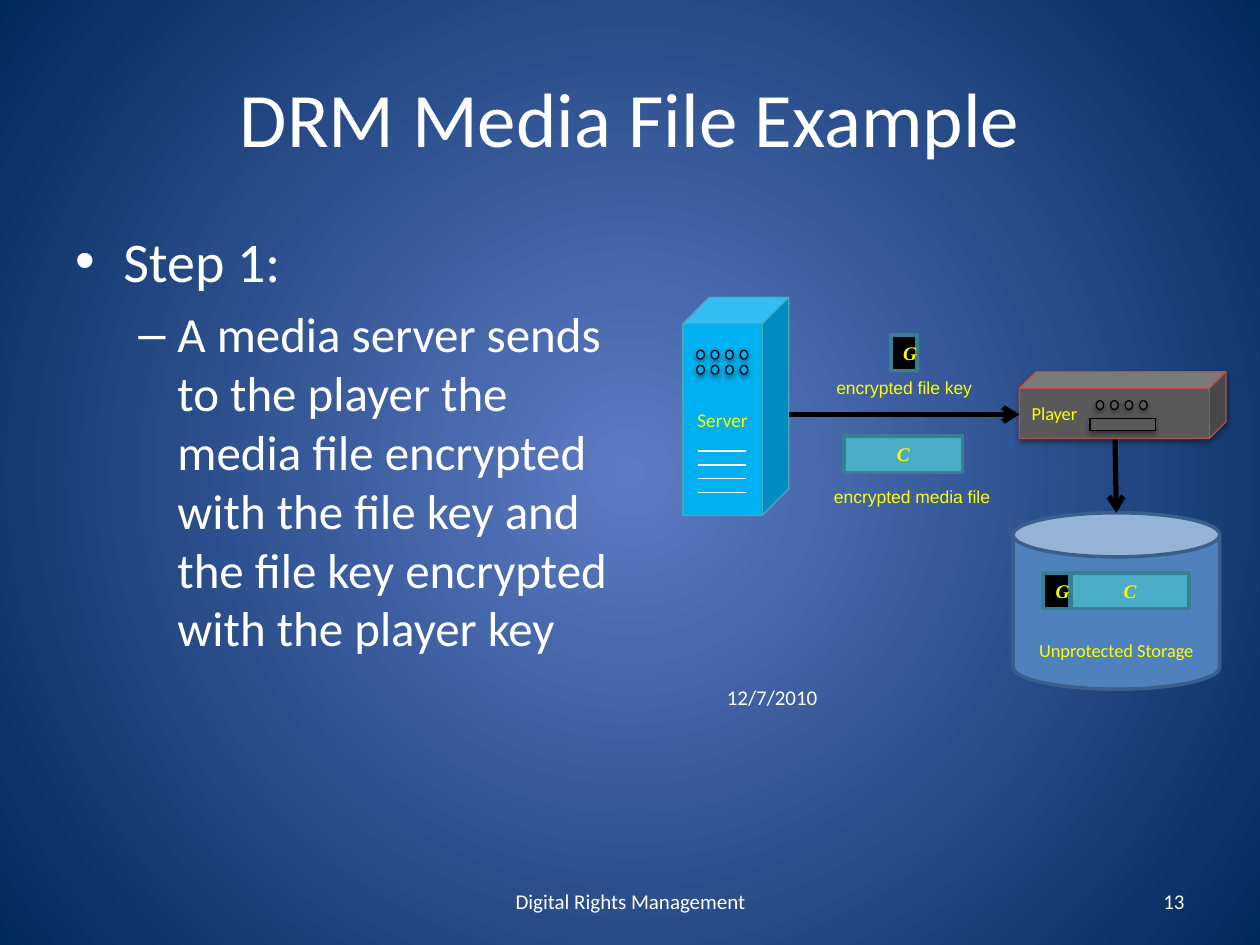
from dataclasses import dataclass

from lxml import etree
from pptx import Presentation
from pptx import util as u
from pptx.dml.color import RGBColor
from pptx.enum import shapes, text
from pptx.oxml import parse_xml
from pptx.oxml.ns import nsdecls, qn

KIND = shapes.MSO_SHAPE
ALIGN = text.PP_ALIGN
ANCHOR = text.MSO_ANCHOR


@dataclass(frozen=True)
class Theme:
    font: str = "Calibri"
    label_font: str = "Arial"
    symbol_font: str = "Times New Roman"
    white: str = "FFFFFF"
    black: str = "000000"
    yellow: str = "FFFF00"
    glow: str = "5E7CC5"
    navy: str = "00295C"
    player: str = "595959"
    player_edge: str = "BF4C48"
    server: str = "00B0F0"
    server_edge: str = "46AAC5"
    storage: str = "4F81BD"
    storage_edge: str = "3A5F8C"
    media: str = "4BACC6"
    media_edge: str = "377F92"
    title: float = 44
    body: float = 32
    sub: float = 28
    footer: float = 12
    symbol: float = 11
    device: float = 10.5
    label: float = 10
    hairline: float = 0.75
    arrow: float = 3


class Board:
    COLS, ROWS = 100, 75

    def __init__(self, prs, theme):
        self.prs, self.t = prs, theme
        self.s = prs.slides.add_slide(prs.slide_layouts[6])
        self.target = self.s.shapes

    def x(self, cols):
        return round(self.prs.slide_width * cols / self.COLS)

    def y(self, rows):
        return round(self.prs.slide_height * rows / self.ROWS)

    def box(self, left, top, width, height):
        return self.x(left), self.y(top), self.x(width), self.y(height)

    def group(self):
        self.target = self.s.shapes.add_group_shape().shapes

    def ungroup(self):
        self.target = self.s.shapes

    def background(self, inner, outer):
        fill = self.s.background.fill
        fill.gradient()
        for stop, color in zip(fill.gradient_stops, (inner, outer)):
            stop.color.rgb = RGBColor.from_string(color)
        grad = self.s.background._cSld.find(".//" + qn("a:gradFill"))
        grad.replace(grad.find(qn("a:lin")), parse_xml(
            f'<a:path {nsdecls("a")} path="circle">'
            '<a:fillToRect l="50000" t="50000" r="50000" b="50000"/></a:path>'))

    def run(self, p, words, size, color=None, font=None, strong=False):
        r = p.add_run()
        r.text = words
        r.font.size = u.Pt(size)
        r.font.name = font or self.t.font
        r.font.color.rgb = RGBColor.from_string(color or self.t.white)
        if strong:
            r.font.bold = r.font.italic = True

    def textbox(self, at, words, size, align=ALIGN.LEFT, anchor=ANCHOR.MIDDLE,
                wrap=True, **style):
        tf = self.target.add_textbox(*self.box(*at)).text_frame
        tf.word_wrap, tf.vertical_anchor = wrap, anchor
        p = tf.paragraphs[0]
        p.alignment = align
        self.run(p, words, size, **style)

    def bullets(self, at, items):
        tf = self.target.add_textbox(*self.box(*at)).text_frame
        tf.word_wrap = True
        for i, (words, size, mark, margin, hang) in enumerate(items):
            p = tf.add_paragraph() if i else tf.paragraphs[0]
            p.level = i
            p.space_before = u.Pt(size * 0.2)
            ppr = p._p.get_or_add_pPr()
            ppr.set("marL", str(u.Inches(margin)))
            ppr.set("indent", str(-u.Inches(hang)))
            etree.SubElement(ppr, qn("a:buFont")).set("typeface", "Arial")
            etree.SubElement(ppr, qn("a:buChar")).set("char", mark)
            self.run(p, words, size)

    def shape(self, kind, at, fill, edge, weight, shadow=False):
        sp = self.target.add_shape(kind, *self.box(*at))
        sp.shadow.inherit = False
        sp.fill.solid()
        sp.fill.fore_color.rgb = RGBColor.from_string(fill)
        sp.line.color.rgb = RGBColor.from_string(edge)
        sp.line.width = u.Pt(weight)
        if shadow:
            sp._element.spPr.find(qn("a:effectLst")).append(parse_xml(
                f'<a:outerShdw {nsdecls("a")} blurRad="40000" dist="20000" '
                'dir="5400000" rotWithShape="0"><a:srgbClr val="000000">'
                '<a:alpha val="38000"/></a:srgbClr></a:outerShdw>'))
        return sp

    def caption(self, sp, words, size, align=ALIGN.CENTER,
                anchor=ANCHOR.MIDDLE, **style):
        tf = sp.text_frame
        tf.word_wrap, tf.vertical_anchor = True, anchor
        p = tf.paragraphs[0]
        p.alignment = align
        self.run(p, words, size, self.t.yellow, **style)

    def line(self, x1, y1, x2, y2, color, weight, arrow=False):
        c = self.target.add_connector(
            shapes.MSO_CONNECTOR.STRAIGHT,
            self.x(x1), self.y(y1), self.x(x2), self.y(y2))
        c.line.color.rgb = RGBColor.from_string(color)
        c.line.width = u.Pt(weight)
        if arrow:
            etree.SubElement(c.line._get_or_add_ln(),
                             qn("a:tailEnd")).set("type", "arrow")
        etree.SubElement(c._element.spPr, qn("a:effectLst"))

    def lights(self, left, top, rows, fill):
        for i in range(rows * 4):
            row, col = divmod(i, 4)
            at = (left + col * 1.15, top + row * 1.2, 0.6, 0.7)
            self.shape(KIND.OVAL, at, fill, self.t.black, self.t.hairline, True)

    def packet(self, at, letter, fill, weight):
        sp = self.shape(KIND.RECTANGLE, at, fill, self.t.media_edge, weight)
        self.caption(sp, letter, self.t.symbol,
                     font=self.t.symbol_font, strong=True)

    def label(self, at, words, align=ALIGN.LEFT):
        self.textbox(at, words, self.t.label, align, ANCHOR.TOP, False,
                     color=self.t.yellow, font=self.t.label_font)


def main():
    prs = Presentation()
    prs.slide_width, prs.slide_height = u.Inches(10), u.Inches(7.5)
    t = Theme()
    b = Board(prs, t)
    b.background(t.glow, t.navy)
    b.textbox((5, 3, 90, 12.5), "DRM Media File Example", t.title, ALIGN.CENTER)
    b.bullets((5, 17.5, 45.8, 49.5), [
        ("Step 1:", t.body, "•", 0.38, 0.38),
        ("A media server sends to the player the media file encrypted with "
         "the file key and the file key encrypted with the player key",
         t.sub, "–", 0.81, 0.31)])
    b.textbox((56.7, 53.3, 23.3, 4), "12/7/2010", t.footer)
    b.textbox((34.2, 69.5, 31.7, 4), "Digital Rights Management", t.footer,
              ALIGN.CENTER)
    b.textbox((71.7, 69.5, 23.3, 4), "13", t.footer, ALIGN.RIGHT)

    b.group()
    player = b.shape(KIND.CUBE, (80.9, 29.5, 16.4, 5.3), t.player,
                     t.player_edge, t.hairline, True)
    b.caption(player, "Player", t.device, ALIGN.LEFT)
    b.shape(KIND.RECTANGLE, (86.5, 33.2, 5.2, 1), t.player, t.black,
            t.hairline, True)
    b.lights(87, 31.8, 1, t.player)

    b.group()
    server = b.shape(KIND.CUBE, (54.2, 23.6, 8.4, 17.3), t.server,
                     t.server_edge, t.hairline)
    b.caption(server, "Server", t.symbol)
    for i in range(4):
        row = 35.8 + i * 1.1
        b.line(55.4, row, 59.2, row, t.white, t.hairline)
    b.lights(55.3, 27.8, 2, t.server)

    b.ungroup()
    b.line(62.6, 32.9, 80.9, 32.9, t.black, t.arrow, True)
    storage = b.shape(KIND.CAN, (80.4, 40.7, 16.4, 14), t.storage,
                      t.storage_edge, 2)
    b.caption(storage, "Unprotected Storage", t.device, anchor=ANCHOR.BOTTOM)
    b.line(88.5, 34.9, 88.6, 40.7, t.black, t.arrow, True)

    b.group()
    b.packet((67, 34.6, 9.4, 2.9), "C", t.media, 2)
    b.label((65.2, 38.1, 14.5, 2.7), "encrypted media file")
    b.packet((70.7, 26.6, 2.1, 2.8), "G", t.black, 2)
    b.label((65.3, 29.4, 12.9, 2.7), "encrypted file key", ALIGN.CENTER)

    b.group()
    b.packet((85, 45.5, 9.4, 2.8), "C", t.media, 2.25)
    b.packet((82.8, 45.5, 2.1, 2.8), "G", t.black, 2.25)
    prs.save("out.pptx")


if __name__ == "__main__":
    main()
